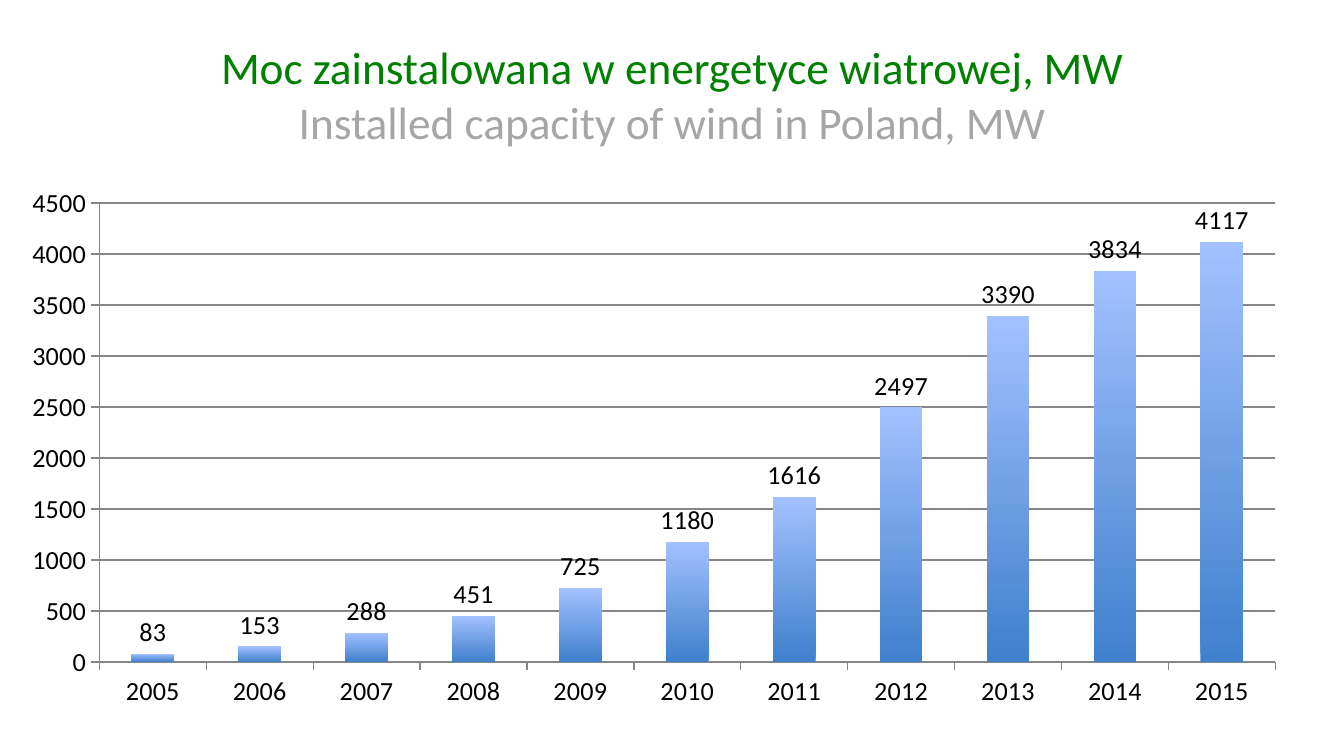
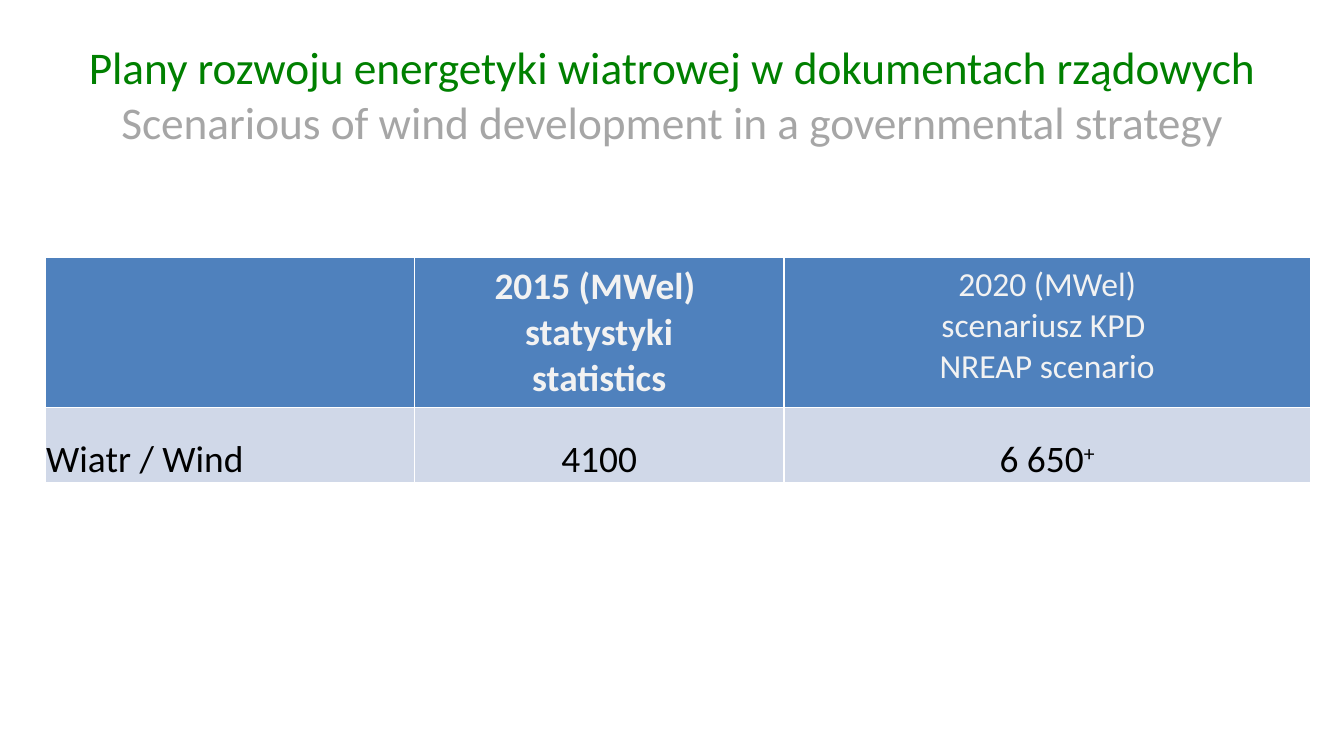
from dataclasses import dataclass
from typing import Any

from lxml import etree
from pptx import Presentation
from pptx.chart.data import CategoryChartData
from pptx.dml.color import RGBColor
from pptx.enum.chart import XL_CHART_TYPE, XL_LABEL_POSITION, XL_TICK_MARK
from pptx.enum.text import MSO_ANCHOR, PP_ALIGN
from pptx.oxml import parse_xml
from pptx.oxml.ns import nsdecls, qn
from pptx.util import Pt

COLUMNS = XL_CHART_TYPE.COLUMN_CLUSTERED
OUTSIDE_END = XL_LABEL_POSITION.OUTSIDE_END
TICK_OUT, TICK_NONE = XL_TICK_MARK.OUTSIDE, XL_TICK_MARK.NONE
MIDDLE, TOP, BOTTOM = MSO_ANCHOR.MIDDLE, MSO_ANCHOR.TOP, MSO_ANCHOR.BOTTOM
CENTER, LEFT = PP_ALIGN.CENTER, PP_ALIGN.LEFT

EMU_PER_PX = 9525
FONT = "Calibri"
COLORS = {
    "polish": "008000",
    "english": "A6A6A6",
    "text": "000000",
    "grid": "868686",
    "bar_base": "3F80CD",
    "bar_top": "A3C1FF",
    "header": "4F81BD",
    "header_text": "F2F2F2",
    "body": "D0D8E8",
    "border": "FFFFFF",
}
CAPACITY = {
    2005: 83, 2006: 153, 2007: 288, 2008: 451, 2009: 725, 2010: 1180,
    2011: 1616, 2012: 2497, 2013: 3390, 2014: 3834, 2015: 4117,
}


@dataclass(frozen=True)
class Box:
    left: int
    top: int
    width: int
    height: int

    def emu(self) -> tuple[int, ...]:
        return tuple(px(n) for n in (self.left, self.top, self.width, self.height))


@dataclass(frozen=True)
class Entry:
    lines: tuple[str, ...] = ()
    size: int = 20
    bold: bool = False
    align: PP_ALIGN = CENTER
    superscript: str = ""


@dataclass(frozen=True)
class RowStyle:
    height: int
    fill: str
    text: str
    cell: dict[str, Any]


TITLE_BOX = Box(48, 22, 864, 90)
CHART_BOX = Box(23, 126, 913, 390)
PLOT_BOX = Box(48, 19, 840, 328)
TABLE_BOX = Box(32, 184, 904, 161)
COLUMN_WIDTHS = (264, 264, 376)
HEADER = RowStyle(107, "header", "header_text", {"vertical_anchor": TOP})
BODY = RowStyle(54, "body", "text", {
    "vertical_anchor": BOTTOM, "margin_left": EMU_PER_PX, "margin_right": EMU_PER_PX,
    "margin_top": EMU_PER_PX, "margin_bottom": 0,
})
SCENARIOS = (
    (HEADER, (
        Entry(),
        Entry(("2015 (MWel) ", "statystyki", "statistics"), bold=True),
        Entry(("2020 (MWel)", "scenariusz KPD ", "NREAP scenario"), size=18),
    )),
    (BODY, (
        Entry(("Wiatr / Wind",), align=LEFT),
        Entry(("4100",)),
        Entry(("6 650",), superscript="+"),
    )),
)


def px(length: int) -> int:
    return length * EMU_PER_PX


def color(name: str) -> RGBColor:
    return RGBColor.from_string(COLORS[name])


def apply(target: Any, values: dict[str, Any]) -> None:
    for attribute, value in values.items():
        setattr(target, attribute, value)


def style_font(font: Any, size: float, color_name: str, bold: bool = False) -> None:
    apply(font, {"name": FONT, "size": Pt(size), "bold": bold})
    font.color.rgb = color(color_name)


def style_line(line: Any) -> None:
    line.width = Pt(0.75)
    line.color.rgb = color("grid")


def add_title(slide: Any, polish: str, english: str) -> None:
    frame = slide.shapes.add_textbox(*TITLE_BOX.emu()).text_frame
    apply(frame, {"word_wrap": True, "vertical_anchor": MIDDLE})
    heading = frame.paragraphs[0]
    heading.alignment = CENTER
    for language, wording in (("polish", polish), ("english", english)):
        if language == "english":
            heading.add_line_break()
        run = heading.add_run()
        run.text = wording
        style_font(run.font, 24.3, language)


def place_plot(chart: Any) -> None:
    plot_area = chart.plots[0]._element.getparent()
    for old in plot_area.findall(qn("c:layout")):
        plot_area.remove(old)
    layout = parse_xml(f"<c:layout {nsdecls('c')}><c:manualLayout/></c:layout>")
    settings = {
        "layoutTarget": "inner", "xMode": "edge", "yMode": "edge",
        "x": PLOT_BOX.left / CHART_BOX.width, "y": PLOT_BOX.top / CHART_BOX.height,
        "w": PLOT_BOX.width / CHART_BOX.width, "h": PLOT_BOX.height / CHART_BOX.height,
    }
    for tag, value in settings.items():
        etree.SubElement(layout[0], qn(f"c:{tag}")).set("val", str(value))
    plot_area.insert(0, layout)


def add_capacity_chart(slide: Any) -> None:
    data = CategoryChartData(number_format="0")
    data.categories = CAPACITY.keys()
    data.add_series("Series 1", CAPACITY.values())
    chart = slide.shapes.add_chart(COLUMNS, *CHART_BOX.emu(), data).chart
    apply(chart, {"has_title": False, "has_legend": False})
    style_font(chart.font, 10, "text")
    place_plot(chart)

    for axis in (chart.category_axis, chart.value_axis):
        apply(axis, {"major_tick_mark": TICK_OUT, "minor_tick_mark": TICK_NONE})
        style_font(axis.tick_labels.font, 14, "text")
        style_line(axis.format.line)
    megawatts = chart.value_axis
    apply(megawatts, {"minimum_scale": 0, "maximum_scale": 4500,
                      "major_unit": 500, "has_major_gridlines": True})
    apply(megawatts.tick_labels, {"number_format": "0", "number_format_is_linked": False})
    style_line(megawatts.major_gridlines.format.line)

    bars = chart.plots[0]
    apply(bars, {"gap_width": 150, "vary_by_categories": False, "has_data_labels": True})
    apply(bars.data_labels, {"show_value": True, "position": OUTSIDE_END,
                             "number_format": "0", "number_format_is_linked": False})
    style_font(bars.data_labels.font, 14, "text")
    fill = bars.series[0].format.fill
    fill.gradient()
    fill.gradient_angle = 90
    for stop, name in zip(fill.gradient_stops, ("bar_base", "bar_top")):
        stop.color.rgb = color(name)


def add_borders(cell: Any) -> None:
    properties = cell._tc.get_or_add_tcPr()
    for index, side in enumerate("LRTB"):
        properties.insert(index, parse_xml(
            f'<a:ln{side} {nsdecls("a")} w="{Pt(1)}"><a:solidFill>'
            f'<a:srgbClr val="{COLORS["border"]}"/></a:solidFill></a:ln{side}>'
        ))


def fill_cell(cell: Any, entry: Entry, style: RowStyle) -> None:
    apply(cell, style.cell)
    cell.fill.solid()
    cell.fill.fore_color.rgb = color(style.fill)
    add_borders(cell)
    frame = cell.text_frame
    for index, line in enumerate(entry.lines):
        paragraph = frame.add_paragraph() if index else frame.paragraphs[0]
        paragraph.alignment = entry.align
        for wording in filter(None, (line, entry.superscript)):
            run = paragraph.add_run()
            run.text = wording
            style_font(run.font, entry.size, style.text, entry.bold)
            if wording == entry.superscript:
                run._r.get_or_add_rPr().set("baseline", "30000")


def add_scenario_table(slide: Any) -> None:
    table = slide.shapes.add_table(
        len(SCENARIOS), len(COLUMN_WIDTHS), *TABLE_BOX.emu()).table
    table.horz_banding = False
    for column, width in zip(table.columns, COLUMN_WIDTHS):
        column.width = px(width)
    for row, (style, entries) in zip(table.rows, SCENARIOS):
        row.height = px(style.height)
        for cell, entry in zip(row.cells, entries):
            fill_cell(cell, entry, style)


def main() -> None:
    deck = Presentation()
    apply(deck, {"slide_width": px(960), "slide_height": px(540)})
    pages = (
        ("Moc zainstalowana w energetyce wiatrowej, MW",
         "Installed capacity of wind in Poland, MW", add_capacity_chart),
        ("Plany rozwoju energetyki wiatrowej w dokumentach rządowych",
         "Scenarious of wind development in a governmental strategy", add_scenario_table),
    )
    for polish, english, add_content in pages:
        slide = deck.slides.add_slide(deck.slide_layouts[6])
        add_title(slide, polish, english)
        add_content(slide)
    deck.save("out.pptx")


if __name__ == "__main__":
    main()
